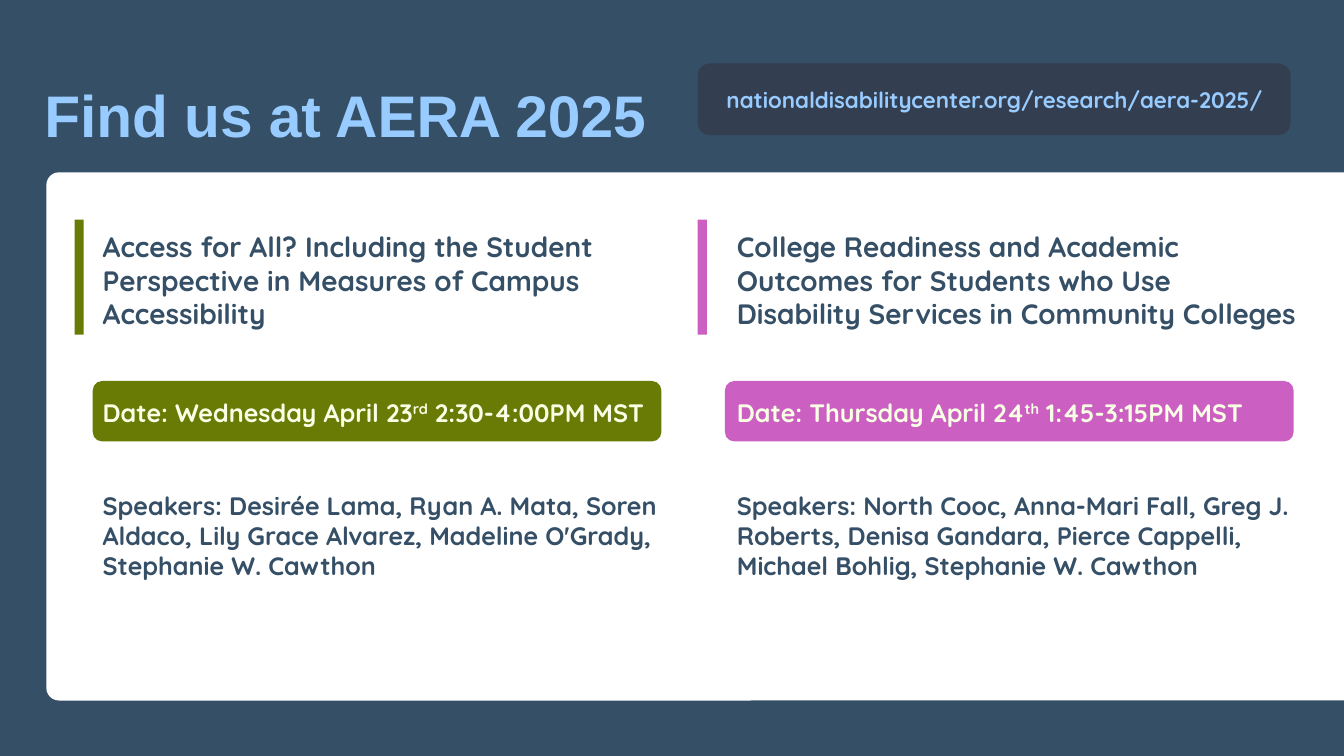
import pptx
import pptx.util
import pptx.dml.color
import pptx.enum.shapes
import pptx.enum.text

Inches = pptx.util.Inches
Pt = pptx.util.Pt

COLORS = {
    "navy": "354F66",
    "slate": "333F50",
    "sky": "98CBFF",
    "white": "FFFFFF",
    "olive": "697A05",
    "orchid": "CC60C2",
    "cream": "F8FFE5",
}
SLIDE_WIDTH, SLIDE_HEIGHT = 13.33, 7.5
ACCENT_TOP, ACCENT_WIDTH, ACCENT_HEIGHT = 2.18, 0.09, 1.14
DATE_TOP, DATE_WIDTH, DATE_HEIGHT = 3.78, 5.64, 0.6
TEXT_TOP, TEXT_HEIGHT = 2.23, 3.57

# Each session: colour, left of accent, date bar and text, text width, then wording
SESSIONS = [
    {
        "color": "olive", "accent": 0.74, "bar": 0.92, "text": 0.92, "width": 6.1,
        "title": ["Access for All? Including the Student Perspective in Measures of Campus Accessibility"],
        "date": ("Date: Wednesday April 23", "rd", "\u00a02:30-4:00PM MST"),
        "speakers": "Speakers: Desirée Lama, Ryan A. Mata, Soren Aldaco, Lily Grace Alvarez, "
                    "Madeline O'Grady, Stephanie W. Cawthon",
    },
    {
        "color": "orchid", "accent": 6.92, "bar": 7.19, "text": 7.21, "width": 5.98,
        "title": ["College Readiness and Academic Outcomes for Students who Use",
                  "Disability Services in Community Colleges"],
        "date": ("Date: Thursday April 24", "th", "\u00a01:45-3:15PM MST"),
        "speakers": "Speakers: North Cooc, Anna-Mari Fall, Greg J. Roberts, Denisa Gandara, "
                    "Pierce Cappelli, Michael Bohlig, Stephanie W. Cawthon",
    },
]


def add_panel(left, top, width, height, color, rounding):
    """Add a borderless rounded rectangle."""
    shape = slide.shapes.add_shape(
        pptx.enum.shapes.MSO_SHAPE.ROUNDED_RECTANGLE,
        Inches(left), Inches(top), Inches(width), Inches(height))
    shape.adjustments[0] = rounding
    shape.shadow.inherit = False
    shape.fill.solid()
    shape.fill.fore_color.rgb = pptx.dml.color.RGBColor.from_string(COLORS[color])
    shape.line.fill.background()


def add_run(paragraph, text, size, color, font="Quicksand"):
    run = paragraph.add_run()
    run.text = text
    run.font.name = font
    run.font.size = Pt(size)
    run.font.bold = True
    run.font.color.rgb = pptx.dml.color.RGBColor.from_string(COLORS[color])
    return run


presentation = pptx.Presentation()
presentation.slide_width = Inches(SLIDE_WIDTH)
presentation.slide_height = Inches(SLIDE_HEIGHT)
slide = presentation.slides.add_slide(presentation.slide_layouts[5])
slide.background.fill.solid()
slide.background.fill.fore_color.rgb = pptx.dml.color.RGBColor.from_string(COLORS["navy"])

# Heading
title = slide.shapes.title
title.left, title.top = Inches(0.34), Inches(0.8)
title.width, title.height = Inches(7.05), Inches(0.75)
title.text_frame.auto_size = pptx.enum.text.MSO_AUTO_SIZE.NONE
title.text_frame.vertical_anchor = pptx.enum.text.MSO_ANCHOR.MIDDLE
paragraph = title.text_frame.paragraphs[0]
paragraph.alignment = pptx.enum.text.PP_ALIGN.LEFT
paragraph.line_spacing = 0.9
add_run(paragraph, "Find us at AERA 2025", 41.9, "sky", "Arial")

# Web address
add_panel(6.92, 0.63, 5.88, 0.71, "slate", 0.17)
address = slide.shapes.add_textbox(Inches(7.06), Inches(0.81), Inches(5.61), Inches(0.37))
address.text_frame.word_wrap = True
paragraph = address.text_frame.paragraphs[0]
paragraph.alignment = pptx.enum.text.PP_ALIGN.CENTER
add_run(paragraph, "nationaldisabilitycenter.org/research/aera-2025/", 16, "sky")

# Card that runs past the right edge, so only its left corners are round
add_panel(0.46, 1.71, 13.64, 5.24, "white", 0.024)

for session in SESSIONS:
    add_panel(session["accent"], ACCENT_TOP, ACCENT_WIDTH, ACCENT_HEIGHT, session["color"], 0.024)
    add_panel(session["bar"], DATE_TOP, DATE_WIDTH, DATE_HEIGHT, session["color"], 0.155)

    details = slide.shapes.add_textbox(
        Inches(session["text"]), Inches(TEXT_TOP), Inches(session["width"]), Inches(TEXT_HEIGHT))
    frame = details.text_frame
    frame.word_wrap = True
    for index, line in enumerate(session["title"]):
        paragraph = frame.add_paragraph() if index else frame.paragraphs[0]
        add_run(paragraph, line, 20, "navy")

    paragraph = frame.add_paragraph()
    paragraph.space_before = Pt(47.5)
    day, ordinal, time = session["date"]
    add_run(paragraph, day, 18, "cream")
    add_run(paragraph, ordinal, 18, "cream").font._element.set("baseline", "30000")
    add_run(paragraph, time, 18, "cream")

    paragraph = frame.add_paragraph()
    paragraph.space_before = Pt(45)
    add_run(paragraph, session["speakers"], 18, "navy")

presentation.save("out.pptx")
